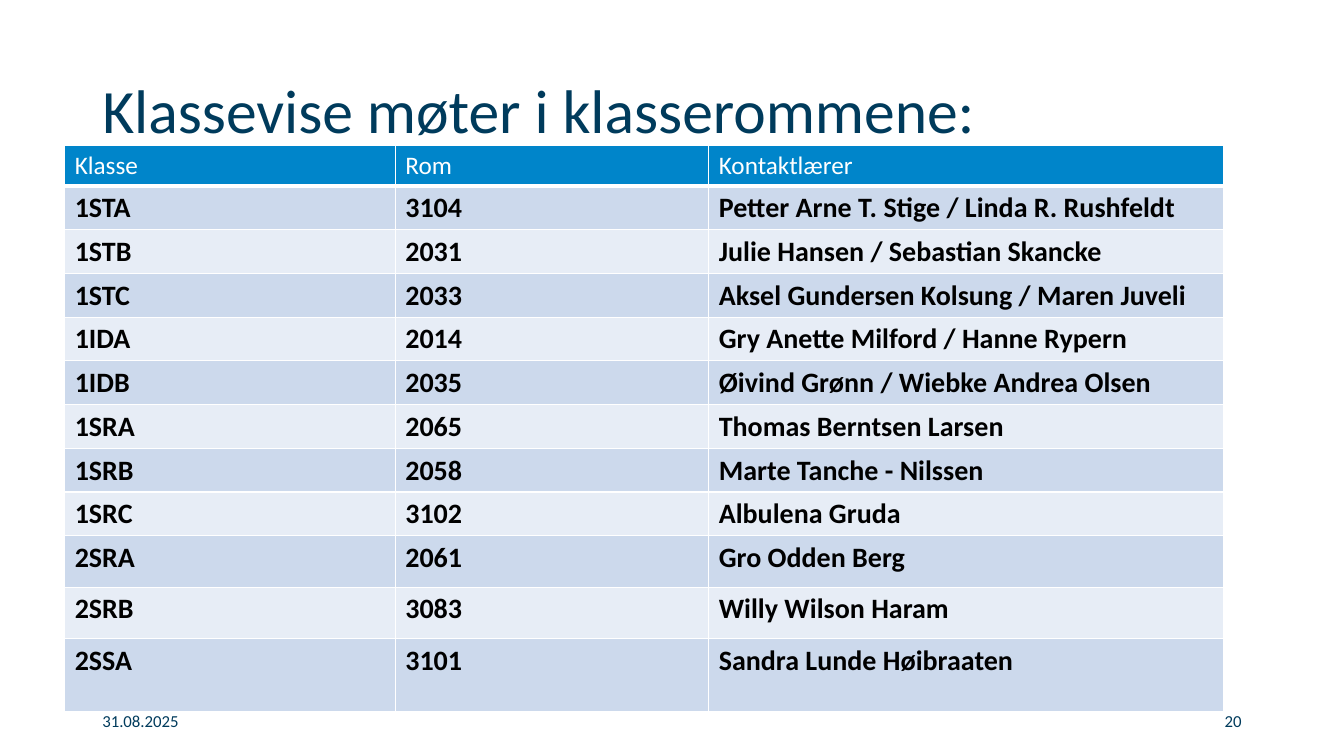
from dataclasses import dataclass

from pptx import Presentation
from pptx.dml import color
from pptx.enum import text
from pptx.oxml import ns, xmlchemy
from pptx.util import Pt
from lxml import etree


@dataclass(frozen=True)
class Theme:
    font: str = "Calibri"
    navy: str = "003B5C"
    blue: str = "0085CA"
    white: str = "FFFFFF"
    black: str = "000000"
    bands: tuple = ("CCD9EC", "E7EDF6")
    title_size: int = 44
    header_size: int = 18
    body_size: int = 20
    footer_size: int = 12
    rule: int = 1
    header_rule: int = 3


THEME = Theme()
HEADINGS = ("Klasse", "Rom", "Kontaktlærer")
CLASSES = (
    ("1STA", "3104", "Petter Arne T. Stige / Linda R. Rushfeldt"),
    ("1STB", "2031", "Julie Hansen / Sebastian Skancke"),
    ("1STC", "2033", "Aksel Gundersen Kolsung / Maren Juveli"),
    ("1IDA", "2014", "Gry Anette Milford / Hanne Rypern"),
    ("1IDB", "2035", "Øivind Grønn / Wiebke Andrea Olsen"),
    ("1SRA", "2065", "Thomas Berntsen Larsen"),
    ("1SRB", "2058", "Marte Tanche - Nilssen"),
    ("1SRC", "3102", "Albulena Gruda"),
    ("2SRA", "2061", "Gro Odden Berg"),
    ("2SRB", "3083", "Willy Wilson Haram"),
    ("2SSA", "3101", "Sandra Lunde Høibraaten"),
)
COLUMN_SHARES = (3.28, 3.11, 5.11)
ROW_HEIGHTS = (28.08, *[30.24] * 8, 36.72, 36.72, 51.84)


def apply(target, values):
    for name, value in values.items():
        setattr(target, name, value)


def style_font(font, size, tone, bold=False):
    apply(font, {"name": THEME.font, "size": Pt(size), "bold": bold})
    font.color.rgb = color.RGBColor.from_string(tone)


def place_line(slide, box, words, size, align=text.PP_ALIGN.LEFT, spacing=1.0):
    frame = slide.shapes.add_textbox(*map(Pt, box)).text_frame
    apply(frame, {"word_wrap": True, "vertical_anchor": text.MSO_ANCHOR.MIDDLE})
    line = frame.paragraphs[0]
    apply(line, {"text": words, "alignment": align, "line_spacing": spacing})
    style_font(line.runs[0].font, size, THEME.navy)


def rule_cell(cell, bottom):
    properties = cell._tc.get_or_add_tcPr()
    widths = {"L": THEME.rule, "R": THEME.rule, "T": THEME.rule, "B": bottom}
    for side, width in widths.items():
        edge = etree.SubElement(properties, ns.qn(f"a:ln{side}"), w=str(Pt(width)))
        fill = etree.SubElement(edge, ns.qn("a:solidFill"))
        etree.SubElement(fill, ns.qn("a:srgbClr"), val=THEME.white)


def fill_cell(cell, words, background, size, tone, bold, bottom):
    rule_cell(cell, bottom)
    cell.fill.solid()
    cell.fill.fore_color.rgb = color.RGBColor.from_string(background)
    cell.text = words
    style_font(cell.text_frame.paragraphs[0].runs[0].font, size, tone, bold)


def place_class_table(slide, box):
    rows = (HEADINGS, *CLASSES)
    table = slide.shapes.add_table(len(rows), len(HEADINGS), *map(Pt, box)).table
    for column, share in zip(table.columns, COLUMN_SHARES):
        column.width = Pt(box[2] * share / sum(COLUMN_SHARES))
    for row, height in zip(table.rows, ROW_HEIGHTS):
        row.height = Pt(height)
    for index, entries in enumerate(rows):
        if index == 0:
            look = (THEME.blue, THEME.header_size, THEME.white, False, THEME.header_rule)
        else:
            band = THEME.bands[(index - 1) % 2]
            look = (band, THEME.body_size, THEME.black, True, THEME.rule)
        for cell, words in zip(table.rows[index].cells, entries):
            fill_cell(cell, words, *look)


def place_footer(slide, box):
    left, top, width, height = box
    part = 216
    place_line(slide, (left, top, part, height), "31.08.2025", THEME.footer_size)
    place_line(slide, (left + width - part, top, part, height), "20",
               THEME.footer_size, text.PP_ALIGN.RIGHT)


def main():
    deck = Presentation()
    apply(deck, {"slide_width": Pt(960), "slide_height": Pt(540)})
    slide = deck.slides.add_slide(deck.slide_layouts[6])
    place_line(slide, (66, 28.8, 828, 104.4), "Klassevise møter i klasserommene:",
               THEME.title_size, spacing=0.9)
    place_class_table(slide, (46.2, 104, 828, 404.6))
    place_footer(slide, (66, 500.5, 828, 28.8))
    deck.save("out.pptx")


if __name__ == "__main__":
    main()
